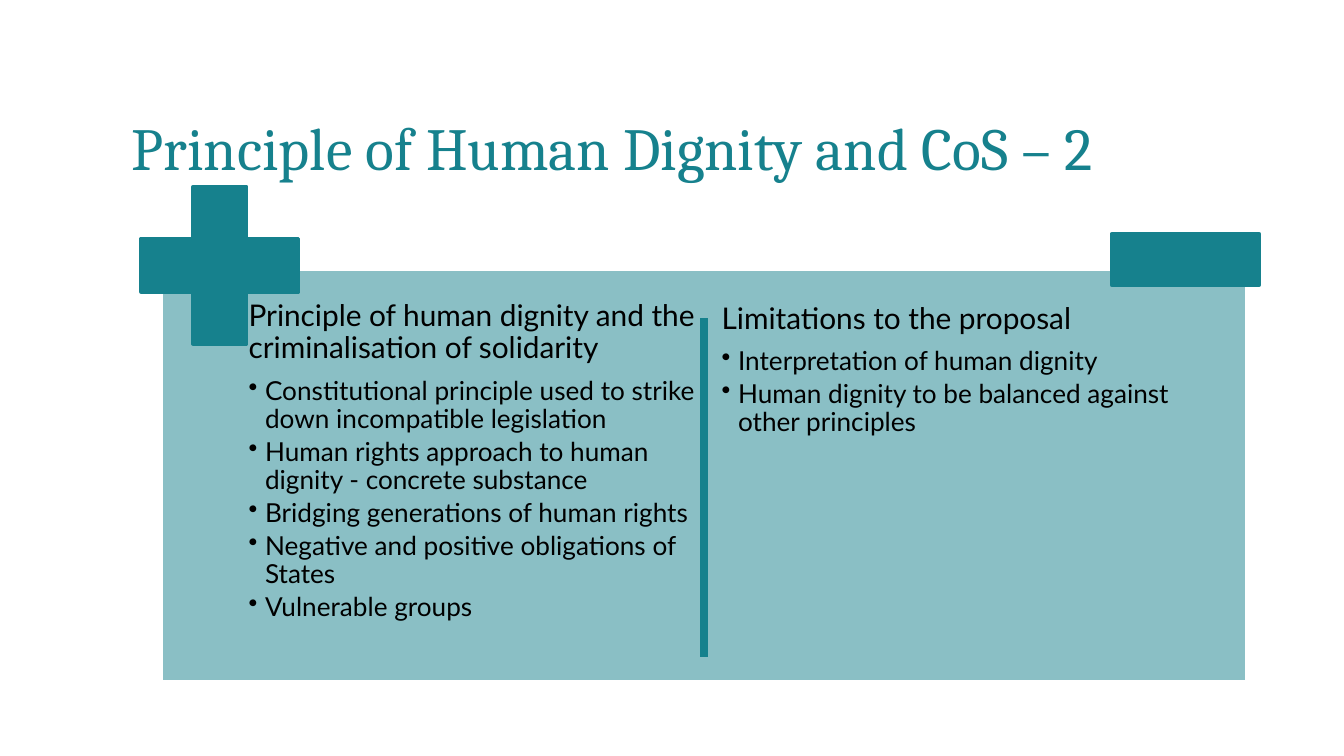
from lxml import etree
from pptx import Presentation, util as u
from pptx.dml.color import RGBColor
from pptx.enum import shapes, text
from pptx.oxml.ns import qn

TEAL, WHITE, BLACK = "16818D", "FFFFFF", "000000"


def rgb(h):
    return RGBColor.from_string(h)


def add_text(x, y, w, h, inset, lines):
    tf = s.shapes.add_textbox(u.Cm(x), u.Cm(y), u.Cm(w), u.Cm(h)).text_frame
    tf.word_wrap = True
    tf.vertical_anchor = text.MSO_ANCHOR.TOP
    tf.margin_left = tf.margin_right = tf.margin_top = tf.margin_bottom = u.Cm(inset)
    tf.text = "\n".join(lines)
    return tf


prs = Presentation()
prs.slide_width, prs.slide_height = u.Cm(25.4), u.Cm(14.29)
s = prs.slides.add_slide(prs.slide_layouts[6])

# Title
p = add_text(2.49, 1.96, 20.65, 1.35, 0, ["Principle of Human Dignity and CoS – 2"]).paragraphs[0]
p.line_spacing = u.Pt(42)
f = p.runs[0].font
f.name, f.size, f.color.rgb = "Cambria", u.Pt(32), rgb(TEAL)

# Panel, then the plus and minus signs
kinds = shapes.MSO_SHAPE
panel, plus, minus = [], [], []
blocks = [
    (kinds.RECTANGLE, 3.05, 5.08, 20.52, 7.82, WHITE),
    (kinds.CROSS, 2.67, 3.53, 2.97, 2.97, TEAL),
    (kinds.RECTANGLE, 21.01, 4.42, 2.79, 0.97, TEAL),
]
for kind, x, y, w, h, line in blocks:
    sp = s.shapes.add_shape(kind, u.Cm(x), u.Cm(y), u.Cm(w), u.Cm(h))
    sp.shadow.inherit = False
    sp.fill.solid()
    sp.fill.fore_color.rgb = rgb(TEAL)
    sp.line.color.rgb = rgb(line)
    sp.line.width = u.Pt(2)
    if kind == kinds.CROSS:
        sp.adjustments[0] = 0.33
    if line == WHITE:
        clr = sp.fill._xPr.find(".//" + qn("a:srgbClr"))
        etree.SubElement(clr, qn("a:alpha")).set("val", "50000")

# Two columns: a heading followed by bullets
columns = [
    (4.62, 5.61, [
        "Principle of human dignity and the criminalisation of solidarity",
        "Constitutional principle used to strike down incompatible legislation",
        "Human rights approach to human dignity - concrete substance",
        "Bridging generations of human rights",
        "Negative and positive obligations of States",
        "Vulnerable groups",
    ]),
    (13.56, 5.66, [
        "Limitations to the proposal",
        "Interpretation of human dignity",
        "Human dignity to be balanced against other principles",
    ]),
]
for x, y, lines in columns:
    tf = add_text(x, y, 8.64, 7.2, 0.08, lines)
    for i, p in enumerate(tf.paragraphs):
        p.line_spacing = 0.9
        p.space_after = u.Pt(2.5 if i else 6.5)
        if i:
            p.level = 1
            pPr = p._p.get_or_add_pPr()
            pPr.set("marL", str(u.Cm(0.31)))
            pPr.set("indent", str(-u.Cm(0.31)))
            etree.SubElement(pPr, qn("a:buChar")).set("char", "•")
        f = p.runs[0].font
        f.name, f.size, f.color.rgb = "Lato", u.Pt(14 if i else 16), rgb(BLACK)

# Divider
line = s.shapes.add_connector(shapes.MSO_CONNECTOR.STRAIGHT,
                              u.Cm(13.31), u.Cm(6.02), u.Cm(13.31), u.Cm(12.42))
line.line.color.rgb = rgb(TEAL)
line.line.width = u.Pt(4.5)
etree.SubElement(line._element.spPr, qn("a:effectLst"))

prs.save("out.pptx")
